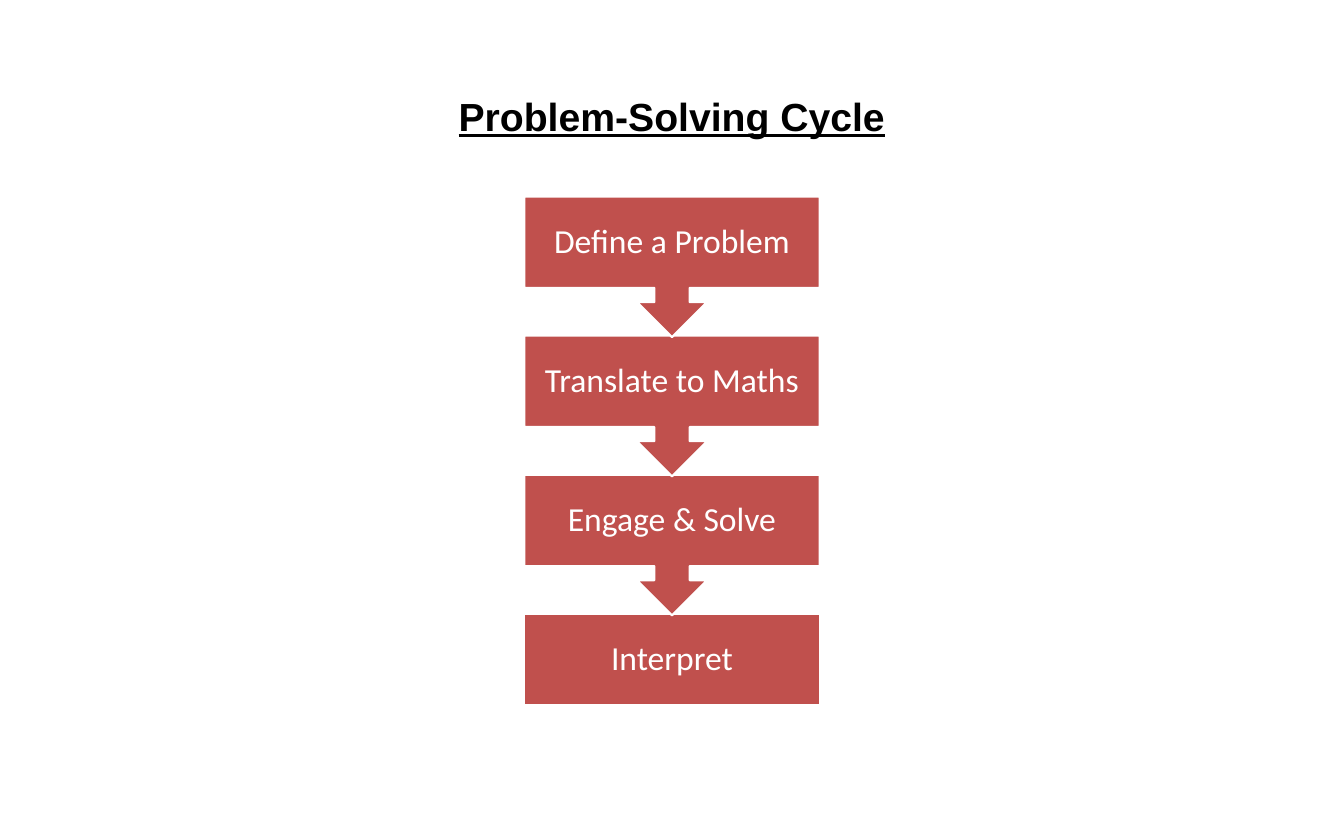
from dataclasses import dataclass

import pptx
import pptx.dml.color
import pptx.enum.shapes
import pptx.enum.text
import pptx.util

SLIDE_W, SLIDE_H = 17.78, 11.11
STEP_W = 3.91
STEP_LEFT = (SLIDE_W - STEP_W) / 2
FIRST_TOP = 2.6
ROW_H = 1.84
BOX_H = 1.21
CALLOUT_H = 1.86
TITLE_W, TITLE_H, TITLE_TOP = 6.67, 0.73, 1.17

RED = "C0504D"
WHITE = "FFFFFF"
BLACK = "000000"

MSO_SHAPE = pptx.enum.shapes.MSO_SHAPE


@dataclass(frozen=True)
class Step:
    row: int
    label: str
    kind: MSO_SHAPE = MSO_SHAPE.DOWN_ARROW_CALLOUT
    height: float = CALLOUT_H


STEPS = [
    Step(0, "Define a Problem"),
    Step(1, "Translate to Maths"),
    Step(2, "Engage & Solve"),
    Step(3, "Interpret", MSO_SHAPE.RECTANGLE, BOX_H),
]


def rgb(value: str) -> pptx.dml.color.RGBColor:
    return pptx.dml.color.RGBColor.from_string(value)


def inches(*values: float) -> list[pptx.util.Length]:
    return [pptx.util.Inches(value) for value in values]


def write(tf, text: str, name: str, size: float, color: str):
    tf.word_wrap = True
    tf.text = text
    p = tf.paragraphs[0]
    p.alignment = pptx.enum.text.PP_ALIGN.CENTER
    font = p.runs[0].font
    font.name = name
    font.size = pptx.util.Pt(size)
    font.color.rgb = rgb(color)
    return p


def add_title(s, text: str) -> None:
    left = (SLIDE_W - TITLE_W) / 2
    sp = s.shapes.add_textbox(*inches(left, TITLE_TOP, TITLE_W, TITLE_H))
    p = write(sp.text_frame, text, "Arial", 37.3, BLACK)
    p.runs[0].font.bold = True
    p.runs[0].font.underline = True


def add_step(s, step: Step) -> None:
    top = FIRST_TOP + step.row * ROW_H
    sp = s.shapes.add_shape(step.kind, *inches(STEP_LEFT, top, STEP_W, step.height))
    sp.shadow.inherit = False
    sp.fill.solid()
    sp.fill.fore_color.rgb = rgb(RED)
    sp.line.color.rgb = rgb(WHITE)
    sp.line.width = pptx.util.Pt(2)
    tf = sp.text_frame
    tf.vertical_anchor = pptx.enum.text.MSO_ANCHOR.MIDDLE
    margin = pptx.util.Inches(0.25)
    tf.margin_left = tf.margin_right = tf.margin_top = tf.margin_bottom = margin
    p = write(tf, step.label, "Calibri", 32, WHITE)
    p.line_spacing = 0.9


def main() -> None:
    prs = pptx.Presentation()
    prs.slide_width, prs.slide_height = inches(SLIDE_W, SLIDE_H)
    s = prs.slides.add_slide(prs.slide_layouts[6])
    for step in reversed(STEPS):
        add_step(s, step)
    add_title(s, "Problem-Solving Cycle")
    prs.save("out.pptx")


if __name__ == "__main__":
    main()
